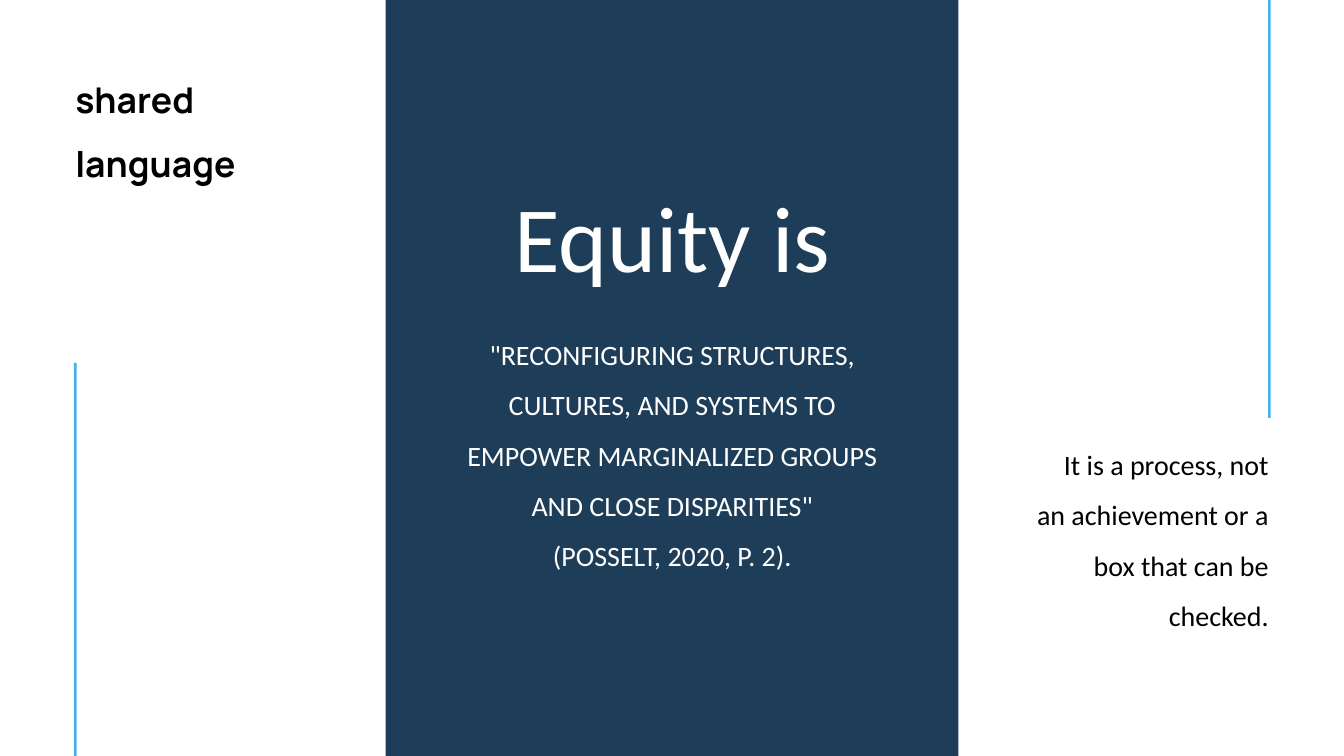
from dataclasses import dataclass

from lxml.etree import SubElement
from pptx import Presentation
from pptx.dml.color import RGBColor
from pptx.enum.shapes import MSO_SHAPE
from pptx.enum.text import MSO_ANCHOR, MSO_AUTO_SIZE, PP_ALIGN
from pptx.oxml.ns import qn
from pptx.shapes.autoshape import Shape
from pptx.slide import Slide
from pptx.util import Inches, Pt


@dataclass(frozen=True)
class Theme:
    """Colours, fonts and type sizes of the slide."""

    navy: RGBColor = RGBColor(0x1E, 0x3D, 0x58)
    sky: RGBColor = RGBColor(0x43, 0xB0, 0xF1)
    black: RGBColor = RGBColor(0, 0, 0)
    white: RGBColor = RGBColor(0xFF, 0xFF, 0xFF)
    body_font: str = "Calibri"
    label_font: str = "Manrope"
    title_size: int = 100
    label_size: int = 38
    body_size: int = 30


@dataclass(frozen=True)
class Area:
    """A rectangle in inches."""

    left: float
    top: float
    width: float
    height: float

    def lengths(self) -> tuple[Inches, Inches, Inches, Inches]:
        """Return the rectangle as slide lengths."""
        return Inches(self.left), Inches(self.top), Inches(self.width), Inches(self.height)


@dataclass(frozen=True)
class TextStyle:
    """Type and paragraph settings of one text."""

    size: int
    color: RGBColor
    align: PP_ALIGN
    font: str = Theme.body_font
    bold: bool = False
    line_spacing: float = 1.5


THEME = Theme()
SLIDE_WIDTH, SLIDE_HEIGHT = 20, 11.25
BAR_WIDTH = 0.04
RIGHT_BAR_END, LEFT_BAR_START = 6.22, 5.4

PANEL = Area(5.74, 0, 8.52, SLIDE_HEIGHT)
BARS = (
    Area(18.87, 0, BAR_WIDTH, RIGHT_BAR_END),
    Area(1.1, LEFT_BAR_START, BAR_WIDTH, SLIDE_HEIGHT - LEFT_BAR_START),
)

TITLE_STYLE = TextStyle(THEME.title_size, THEME.white, PP_ALIGN.CENTER, line_spacing=1.03)
QUOTE_STYLE = TextStyle(THEME.body_size, THEME.white, PP_ALIGN.CENTER)
LABEL_STYLE = TextStyle(THEME.label_size, THEME.black, PP_ALIGN.LEFT, THEME.label_font, True)
REMARK_STYLE = TextStyle(THEME.body_size, THEME.black, PP_ALIGN.RIGHT)

QUOTE = (
    '"RECONFIGURING STRUCTURES, CULTURES, AND SYSTEMS TO EMPOWER '
    'MARGINALIZED GROUPS AND CLOSE DISPARITIES"'
)


def add_block(page: Slide, area: Area, color: RGBColor) -> Shape:
    """Draw a plain filled rectangle."""
    block = page.shapes.add_shape(MSO_SHAPE.RECTANGLE, *area.lengths())
    block.shadow.inherit = False
    block.fill.solid()
    block.fill.fore_color.rgb = color
    block.line.fill.background()
    return block


def write(box: Shape, area: Area, style: TextStyle, *lines: str) -> None:
    """Place a text box or placeholder and fill it with paragraphs."""
    box.left, box.top, box.width, box.height = area.lengths()
    frame = box.text_frame
    frame.text = "\n".join(lines)
    frame.word_wrap = True
    frame.auto_size = MSO_AUTO_SIZE.SHAPE_TO_FIT_TEXT
    frame.vertical_anchor = MSO_ANCHOR.TOP
    frame.margin_left = frame.margin_top = frame.margin_right = frame.margin_bottom = 0
    for para in frame.paragraphs:
        if box.is_placeholder:
            properties = para._p.get_or_add_pPr()
            properties.set("marL", "0")
            properties.set("indent", "0")
            SubElement(properties, qn("a:buNone"))
        para.alignment = style.align
        para.line_spacing = style.line_spacing
        para.space_before = Pt(0)
        para.font.name = style.font
        para.font.size = Pt(style.size)
        para.font.bold = style.bold
        para.font.color.rgb = style.color


def add_text(page: Slide, area: Area, style: TextStyle, *lines: str) -> None:
    """Add a free text box."""
    write(page.shapes.add_textbox(*area.lengths()), area, style, *lines)


def main() -> None:
    """Build and save the slide."""
    deck = Presentation()
    deck.slide_width, deck.slide_height = Inches(SLIDE_WIDTH), Inches(SLIDE_HEIGHT)
    page = deck.slides.add_slide(deck.slide_layouts[1])

    panel = add_block(page, PANEL, THEME.navy)
    page.shapes.title.element.addprevious(panel.element)

    add_text(page, Area(1.12, 0.84, 3.69, 1.6), LABEL_STYLE, "shared language")
    add_text(
        page, Area(15.38, 6.41, 3.5, 2.78), REMARK_STYLE,
        "It is a process, not an achievement or a box that can be checked.",
    )
    write(
        page.placeholders[1], Area(6.8, 4.77, 6.41, 3.53), QUOTE_STYLE,
        QUOTE, "(POSSELT, 2020, P. 2).",
    )
    write(page.shapes.title, Area(6.8, 2.62, 6.41, 1.68), TITLE_STYLE, "Equity is")

    for bar in BARS:
        add_block(page, bar, THEME.sky)

    deck.save("out.pptx")


if __name__ == "__main__":
    main()
